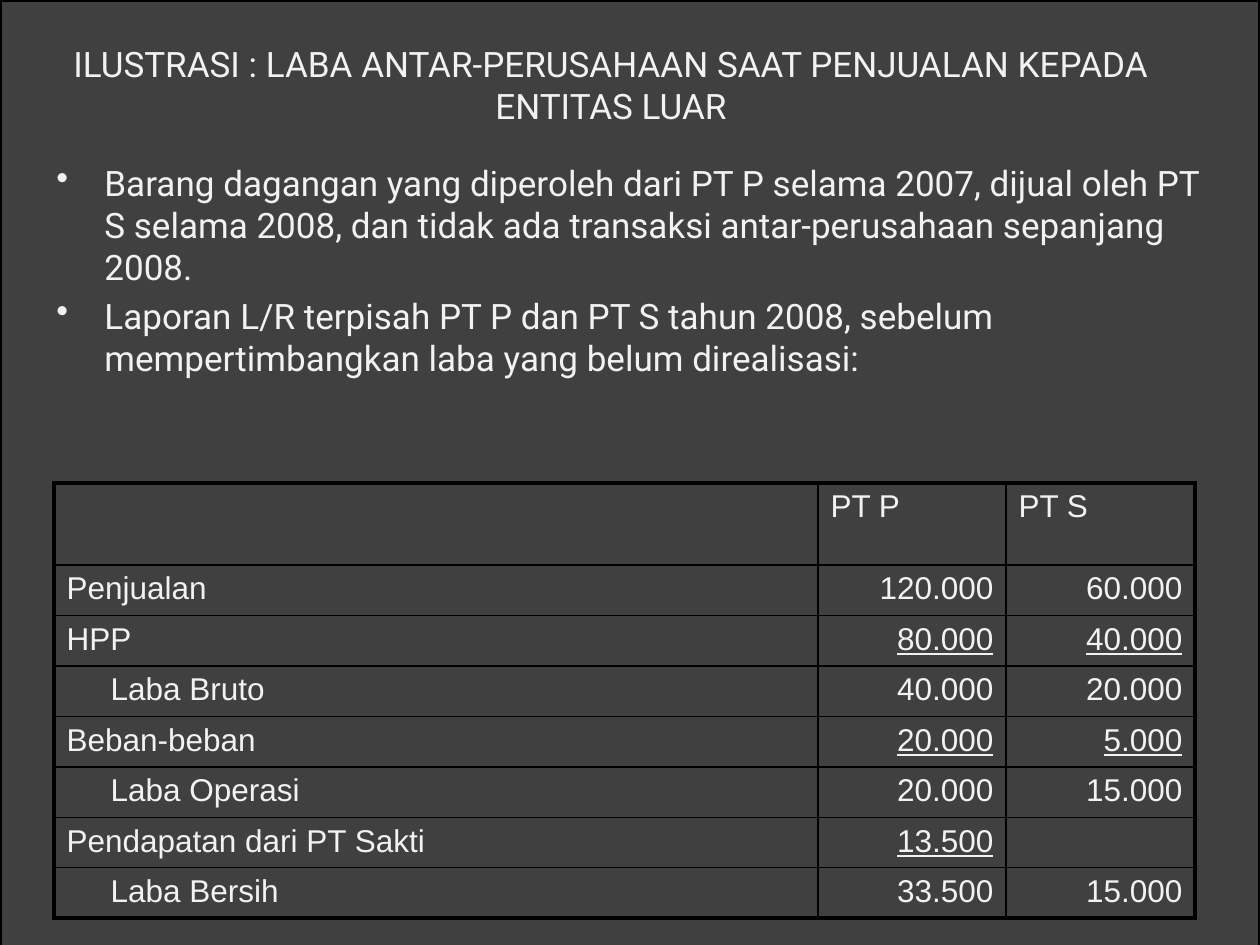
import pptx
import pptx.dml.color
import pptx.enum.shapes
import pptx.enum.text
import pptx.oxml
import pptx.oxml.ns
import pptx.util

RGBColor = pptx.dml.color.RGBColor
ALIGN = pptx.enum.text.PP_ALIGN
ANCHOR = pptx.enum.text.MSO_ANCHOR

BACKGROUND = RGBColor(0x40, 0x40, 0x40)
TEXT = RGBColor(0xF2, 0xF2, 0xF2)
BLACK = RGBColor(0, 0, 0)

TITLE = "ILUSTRASI : LABA ANTAR-PERUSAHAAN SAAT PENJUALAN KEPADA ENTITAS LUAR"
BULLETS = [
    "Barang dagangan yang diperoleh dari PT P selama 2007, dijual oleh PT S "
    "selama 2008, dan tidak ada transaksi antar-perusahaan sepanjang 2008.",
    "Laporan L/R terpisah PT P dan PT S tahun 2008, sebelum "
    "mempertimbangkan laba yang belum direalisasi:",
]
ROWS = [
    ("", "PT P", "PT S"),
    ("Penjualan", "120.000", "60.000"),
    ("HPP", "80.000", "40.000"),
    ("Laba Bruto", "40.000", "20.000"),
    ("Beban-beban", "20.000", "5.000"),
    ("Laba Operasi", "20.000", "15.000"),
    ("Pendapatan dari PT Sakti", "13.500", ""),
    ("Laba Bersih", "33.500", "15.000"),
]
SUBTOTALS = {"Laba Bruto", "Laba Operasi", "Laba Bersih"}
UNDERLINED = {"HPP", "Beban-beban", "Pendapatan dari PT Sakti"}
COLUMN_WIDTHS = [764, 188, 189]
ROW_HEIGHTS = [82, 48, 48, 50, 50, 50, 50, 48]
TABLE_LEFT, TABLE_TOP = 54, 483
BULLET_INDENT, SUBTOTAL_INDENT = 48, 44
THICK, THIN = 2.25, 1


def px(value):
    return pptx.util.Emu(round(value * 914400 / 126))


def add_run(paragraph, text, font, size, underline=False):
    run = paragraph.add_run()
    run.text = text
    run.font.name = font
    run.font.size = pptx.util.Pt(size)
    run.font.color.rgb = TEXT
    if underline:
        run.font.underline = True


def add_text_box(slide, left, top, width, height, anchor):
    box = slide.shapes.add_textbox(px(left), px(top), px(width), px(height))
    frame = box.text_frame
    frame.word_wrap = True
    frame.vertical_anchor = anchor
    return frame


def add_bullet(paragraph):
    properties = paragraph._p.get_or_add_pPr()
    properties.set("marL", str(px(BULLET_INDENT)))
    properties.set("indent", str(-px(BULLET_INDENT)))
    bullet = pptx.oxml.parse_xml(
        f'<a:buChar {pptx.oxml.ns.nsdecls("a")} char="•"/>')
    properties.append(bullet)


def set_borders(cell, widths):
    properties = cell._tc.get_or_add_tcPr()
    for position, (side, width) in enumerate(widths.items()):
        line = pptx.oxml.parse_xml(
            f'<a:{side} {pptx.oxml.ns.nsdecls("a")} w="{pptx.util.Pt(width)}">'
            f'<a:solidFill><a:srgbClr val="{BLACK}"/></a:solidFill></a:{side}>')
        properties.insert(position, line)


def add_income_table(slide):
    last_row, last_column = len(ROWS) - 1, len(COLUMN_WIDTHS) - 1
    frame = slide.shapes.add_table(
        len(ROWS), len(COLUMN_WIDTHS), px(TABLE_LEFT), px(TABLE_TOP),
        px(sum(COLUMN_WIDTHS)), px(sum(ROW_HEIGHTS)))
    table = frame.table
    table.first_row = False
    table.horz_banding = False
    for column, width in zip(table.columns, COLUMN_WIDTHS):
        column.width = px(width)
    for row, height in zip(table.rows, ROW_HEIGHTS):
        row.height = px(height)
    for i, values in enumerate(ROWS):
        label = values[0]
        for j, text in enumerate(values):
            cell = table.cell(i, j)
            cell.fill.background()
            set_borders(cell, {
                "lnL": THICK if j == 0 else THIN,
                "lnR": THICK if j == last_column else THIN,
                "lnT": THICK if i == 0 else THIN,
                "lnB": THICK if i == last_row else THIN,
            })
            paragraph = cell.text_frame.paragraphs[0]
            if i and j:
                paragraph.alignment = ALIGN.RIGHT
            if j == 0 and label in SUBTOTALS:
                paragraph._p.get_or_add_pPr().set("marL", str(px(SUBTOTAL_INDENT)))
            if text:
                add_run(paragraph, text, "Arial", 18, j > 0 and label in UNDERLINED)


def main():
    presentation = pptx.Presentation()
    presentation.slide_width = px(1260)
    presentation.slide_height = px(945)
    slide = presentation.slides.add_slide(presentation.slide_layouts[6])

    backdrop = slide.shapes.add_shape(
        pptx.enum.shapes.MSO_SHAPE.RECTANGLE, 0, 0, px(1260), px(976))
    backdrop.shadow.inherit = False
    backdrop.fill.solid()
    backdrop.fill.fore_color.rgb = BACKGROUND
    backdrop.line.color.rgb = BLACK
    backdrop.line.width = pptx.util.Pt(2)

    title = add_text_box(slide, 44, 16, 1134, 137, ANCHOR.MIDDLE).paragraphs[0]
    title.alignment = ALIGN.CENTER
    add_run(title, TITLE, "Roboto", 20)

    body = add_text_box(slide, 44, 155, 1181, 277, ANCHOR.TOP)
    for i, text in enumerate(BULLETS):
        paragraph = body.add_paragraph() if i else body.paragraphs[0]
        add_bullet(paragraph)
        if i:
            paragraph.space_before = pptx.util.Pt(4)
        add_run(paragraph, text, "Roboto", 20)

    add_income_table(slide)
    presentation.save("out.pptx")


if __name__ == "__main__":
    main()
